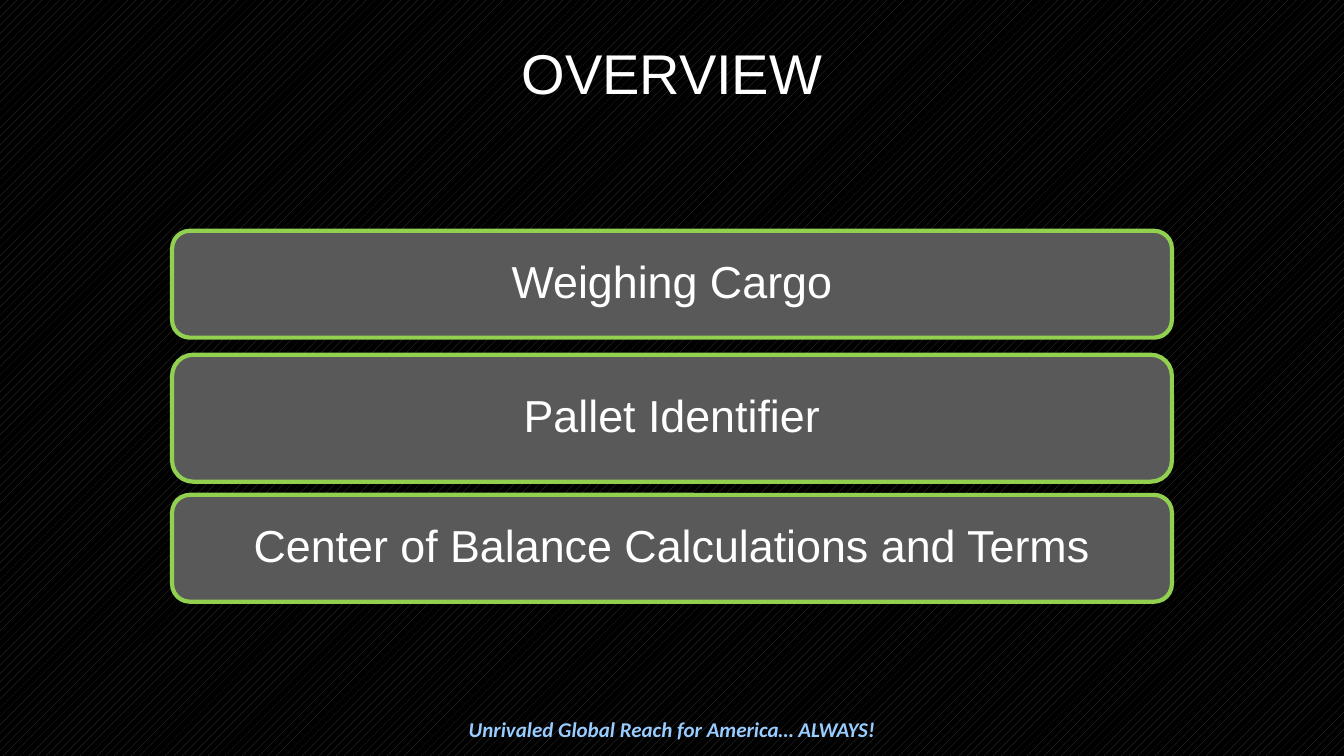
import pptx
import pptx.util
import pptx.dml.color
import pptx.enum.dml
import pptx.enum.shapes
import pptx.enum.text

Pt = pptx.util.Pt

TITLE = "OVERVIEW"
MOTTO = "Unrivaled Global Reach for America… ALWAYS!"
# Topic, top and height of its panel
TOPICS = [
    ("Weighing Cargo", 164.9, 76.3),
    ("Pallet Identifier", 253.4, 90.7),
    ("Center of Balance Calculations and Terms", 353.5, 76.3),
]

SLIDE_WIDTH, SLIDE_HEIGHT = 960, 540
PANEL_WIDTH, TITLE_WIDTH = 714.2, 720
PANEL_INSET = 9.4

THEME = {
    "background": "000000", "pattern": "404040",
    "panel": "595959", "border": "92D050", "border_width": 3,
    "title": {"font": "Arial", "size": 40, "color": "FFFFFF"},
    "topic": {"font": "Arial", "size": 32, "color": "FFFFFF"},
    "motto": {"font": "Calibri", "size": 15, "color": "99CCFF",
              "bold": True, "italic": True},
}


def rgb(code):
    return pptx.dml.color.RGBColor.from_string(code)


def centered_left(width):
    return (SLIDE_WIDTH - width) / 2


def write_centered(box, text, style):
    """Fill a box with one centred paragraph and return that paragraph."""
    box.text_frame.word_wrap = True
    para = box.text_frame.paragraphs[0]
    para.alignment = pptx.enum.text.PP_ALIGN.CENTER
    span = para.add_run()
    span.text = text
    span.font.name = style["font"]
    span.font.size = Pt(style["size"])
    span.font.color.rgb = rgb(style["color"])
    span.font.bold = style.get("bold", False)
    span.font.italic = style.get("italic", False)
    return para


def add_label(page, text, style, top, width, height):
    box = page.shapes.add_textbox(
        Pt(centered_left(width)), Pt(top), Pt(width), Pt(height))
    box.text_frame.auto_size = pptx.enum.text.MSO_AUTO_SIZE.SHAPE_TO_FIT_TEXT
    write_centered(box, text, style)


def add_panel(page, text, top, height):
    panel = page.shapes.add_shape(
        pptx.enum.shapes.MSO_SHAPE.ROUNDED_RECTANGLE,
        Pt(centered_left(PANEL_WIDTH)), Pt(top), Pt(PANEL_WIDTH), Pt(height))
    panel.shadow.inherit = False
    panel.fill.solid()
    panel.fill.fore_color.rgb = rgb(THEME["panel"])
    panel.line.color.rgb = rgb(THEME["border"])
    panel.line.width = Pt(THEME["border_width"])
    frame = panel.text_frame
    frame.vertical_anchor = pptx.enum.text.MSO_ANCHOR.MIDDLE
    frame.margin_left = frame.margin_right = Pt(PANEL_INSET)
    frame.margin_top = frame.margin_bottom = Pt(PANEL_INSET)
    write_centered(panel, text, THEME["topic"]).line_spacing = 0.9


def paint_background(page):
    fill = page.background.fill
    fill.patterned()
    fill.pattern = pptx.enum.dml.MSO_PATTERN.PERCENT_20
    fill.fore_color.rgb = rgb(THEME["pattern"])
    fill.back_color.rgb = rgb(THEME["background"])


def main():
    deck = pptx.Presentation()
    deck.slide_width, deck.slide_height = Pt(SLIDE_WIDTH), Pt(SLIDE_HEIGHT)
    page = deck.slides.add_slide(deck.slide_layouts[6])
    paint_background(page)
    add_label(page, MOTTO, THEME["motto"], 508.3, SLIDE_WIDTH, 25.2)
    for topic, top, height in TOPICS:
        add_panel(page, topic, top, height)
    add_label(page, TITLE, THEME["title"], 23.8, TITLE_WIDTH, 55.4)
    deck.save("out.pptx")


if __name__ == "__main__":
    main()
